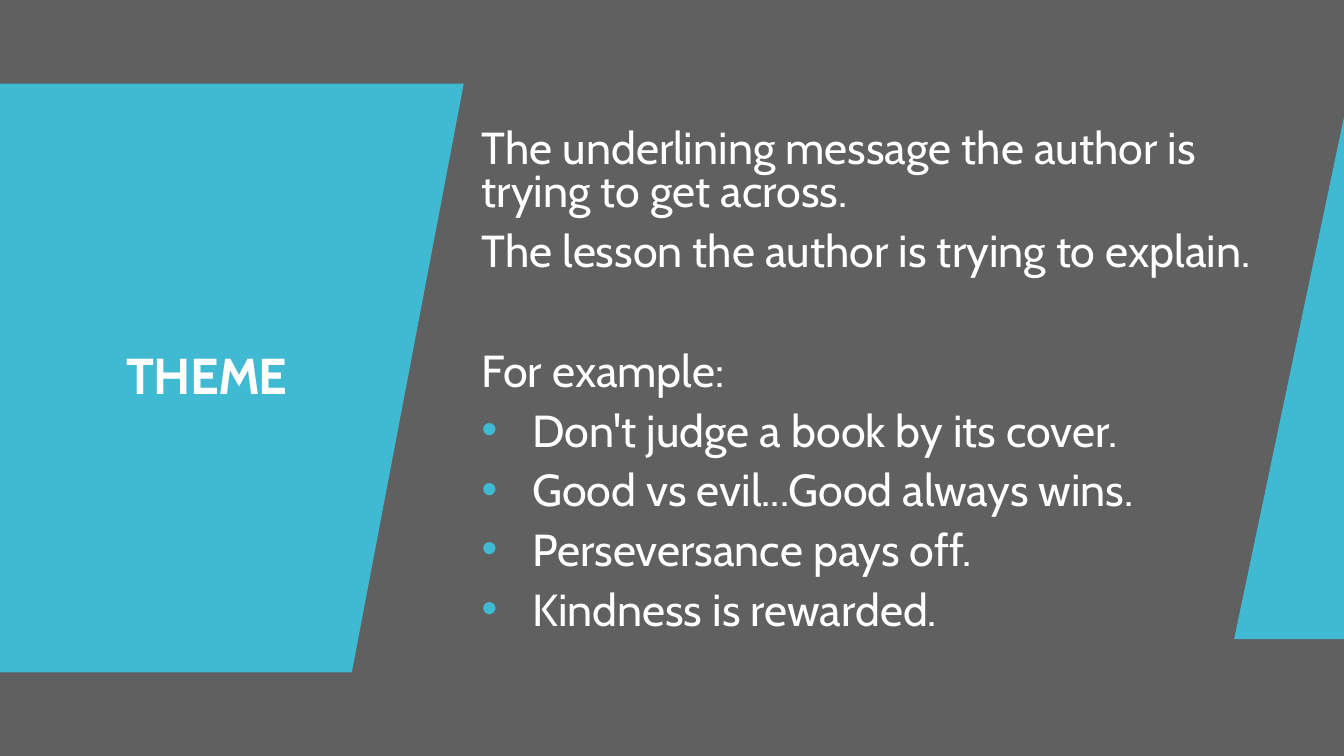
from lxml import etree
from pptx import Presentation
from pptx import util as u
from pptx.dml.color import RGBColor
from pptx.enum import text
from pptx.oxml import ns

GREY, BLUE, WHITE = "606060", "40BAD2", "FFFFFF"


def color(value):
    return RGBColor.from_string(value)


class ThemeSlide:
    font = "Cabin"

    def __init__(self, presentation):
        self.slide = presentation.slides.add_slide(presentation.slide_layouts[6])
        fill = self.slide.background.fill
        fill.solid()
        fill.fore_color.rgb = color(GREY)

    def panel(self, points):
        corners = [(u.Inches(x), u.Inches(y)) for x, y in points]
        builder = self.slide.shapes.build_freeform(*corners[0], scale=1.0)
        builder.add_line_segments(corners[1:], close=True)
        shape = builder.convert_to_shape()
        shape.shadow.inherit = False
        shape.fill.solid()
        shape.fill.fore_color.rgb = color(BLUE)
        shape.line.fill.background()

    def text_box(self, left, top, width, height, anchor):
        box = self.slide.shapes.add_textbox(*map(u.Inches, (left, top, width, height)))
        frame = box.text_frame
        frame.word_wrap = True
        frame.vertical_anchor = anchor
        return frame

    def add_words(self, paragraph, words, size, spacing, before=0, bold=False):
        paragraph.line_spacing = spacing
        paragraph.space_before = u.Pt(before)
        run = paragraph.add_run()
        run.text = words
        run.font.name = self.font
        run.font.size = u.Pt(size)
        run.font.bold = bold
        run.font.color.rgb = color(WHITE)
        return run

    def title(self, words):
        frame = self.text_box(0.54, 1.84, 3.03, 3.82, text.MSO_ANCHOR.MIDDLE)
        paragraph = frame.paragraphs[0]
        paragraph.alignment = text.PP_ALIGN.CENTER
        run = self.add_words(paragraph, words, 36, 0.9, bold=True)
        run._r.get_or_add_rPr().set("spc", "-60")

    def bullet(self, paragraph):
        properties = paragraph._p.get_or_add_pPr()
        properties.set("marL", str(u.Inches(0.5)))
        properties.set("indent", str(u.Inches(-0.5)))
        bullet_color = etree.SubElement(properties, ns.qn("a:buClr"))
        etree.SubElement(bullet_color, ns.qn("a:srgbClr"), val=BLUE)
        etree.SubElement(properties, ns.qn("a:buFont"), typeface="Arial")
        etree.SubElement(properties, ns.qn("a:buChar"), char="•")

    def body(self, lines):
        frame = self.text_box(4.68, 0.35, 8.1, 6, text.MSO_ANCHOR.BOTTOM)
        for index, (words, before, bulleted) in enumerate(lines):
            paragraph = frame.add_paragraph() if index else frame.paragraphs[0]
            self.add_words(paragraph, words, 32, 0.8, before)
            if bulleted:
                self.bullet(paragraph)


def main():
    presentation = Presentation()
    presentation.slide_width = u.Inches(13.33)
    presentation.slide_height = u.Inches(7.5)
    theme = ThemeSlide(presentation)
    theme.panel([(3.49, 6.67), (0, 6.67), (0, 0.83), (4.6, 0.83)])
    theme.title("THEME")
    examples = [
        "Don't judge a book by its cover.",
        "Good vs evil...Good always wins.",
        "Perseversance pays off.",
        "Kindness is rewarded.",
    ]
    theme.body([
        ("The underlining message the author is trying to get across.", 0, False),
        ("The lesson the author is trying to explain.", 12, False),
        ("For example:", 55, False),
        *((example, 12, True) for example in examples),
    ])
    theme.panel([(13.33, 6.34), (12.24, 6.34), (13.33, 1.16)])
    presentation.save("out.pptx")


if __name__ == "__main__":
    main()
